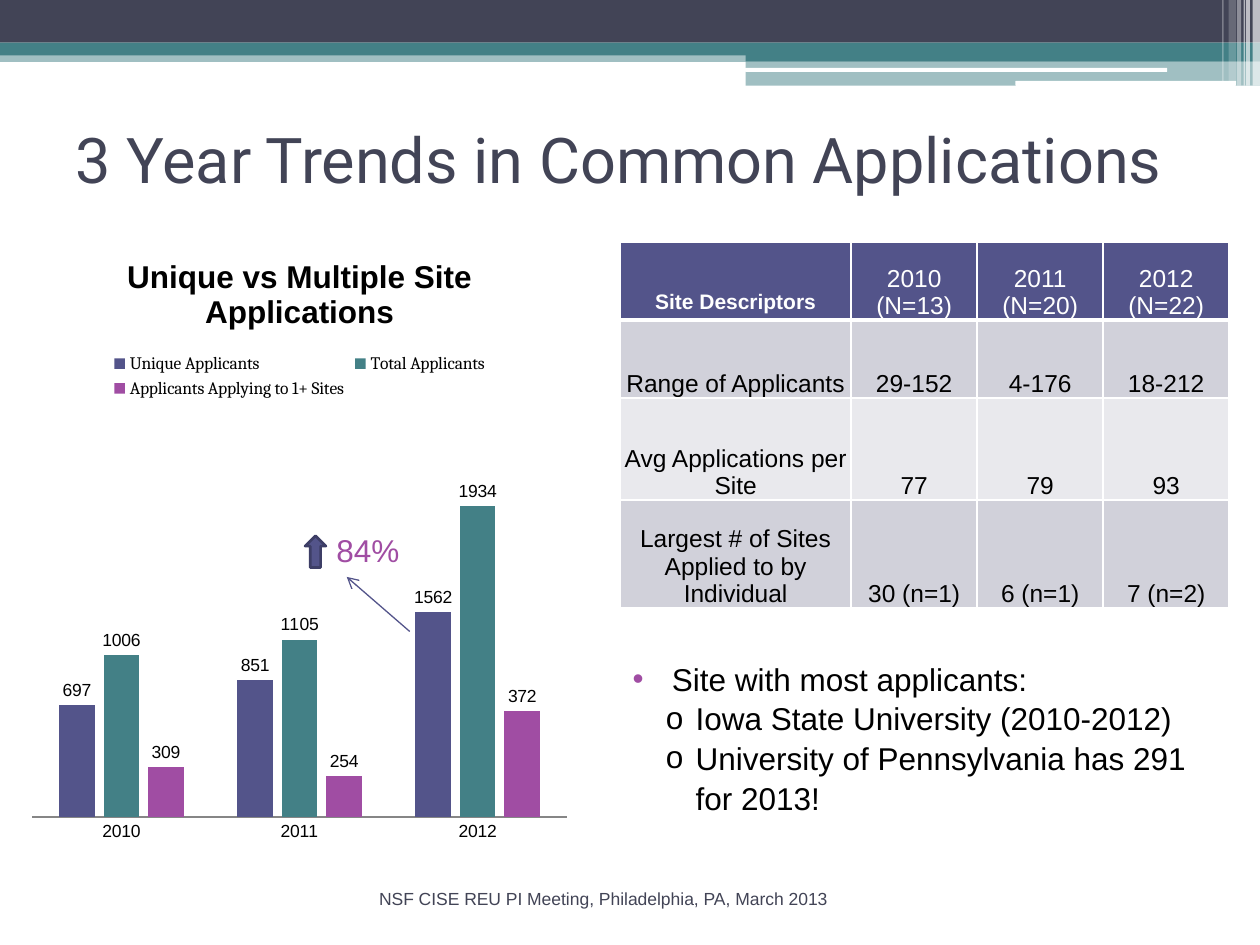
from lxml.etree import SubElement
from pptx import Presentation
from pptx.chart.data import CategoryChartData
from pptx.dml.color import RGBColor
from pptx.enum.chart import XL_CHART_TYPE as ChartType, XL_LABEL_POSITION as LabelPosition
from pptx.enum.chart import XL_LEGEND_POSITION as LegendPosition, XL_TICK_MARK as TickMark
from pptx.enum.shapes import MSO_CONNECTOR as Connector, MSO_SHAPE as Shape
from pptx.enum.text import MSO_ANCHOR as Anchor, MSO_AUTO_SIZE as AutoSize, PP_ALIGN as Align
from pptx.oxml.ns import qn
from pptx.util import Cm, Pt

SLATE = RGBColor(0x42, 0x44, 0x56)
TEAL = RGBColor(0x43, 0x80, 0x86)
INDIGO = RGBColor(0x53, 0x54, 0x8A)
DARK_INDIGO = RGBColor(0x3D, 0x3E, 0x66)
PURPLE = RGBColor(0xA0, 0x4D, 0xA3)
BAND_DARK = RGBColor(0xD1, 0xD1, 0xDA)
BAND_LIGHT = RGBColor(0xE9, 0xE9, 0xED)
GRAY = RGBColor(0x86, 0x86, 0x86)
WHITE = RGBColor(0xFF, 0xFF, 0xFF)
BLACK = RGBColor(0, 0, 0)

HEADER_BARS = [
    (0, 1.02, 25.4, 0.23, TEAL, 50),
    (0, 0, 25.4, 0.86, SLATE, 100),
    (0, 0.86, 25.4, 0.26, TEAL, 100),
    (15.03, 0.99, 10.37, 0.24, TEAL, 100),
    (15.03, 1.23, 10.37, 0.5, TEAL, 50),
]
HEADER_LINES = [(15.02, 1.37, 8.51, 0.08), (20.47, 1.63, 4.45, 0.1)]
HEADER_STRIPES = [
    (25.25, 0.15, 1.73, 65), (25.12, 0.08, 1.73, 65), (25.07, 0.03, 1.73, 60),
    (24.94, 0.08, 1.73, 40), (24.77, 0.15, 1.63, 20), (24.64, 0.03, 1.63, 30),
]
YEARS = ["2010", "2011", "2012"]
SERIES = [
    ("Unique Applicants", (697, 851, 1275), INDIGO, "1562"),
    ("Total Applicants", (1006, 1105, 1934), TEAL, None),
    ("Applicants Applying to 1+ Sites", (309, 254, 659), PURPLE, "372"),
]
TABLE_ROWS = [
    ("Site Descriptors", "2010 (N=13)", "2011 (N=20)", "2012 (N=22)"),
    ("Range of Applicants", "29-152", "4-176", "18-212"),
    ("Avg Applications per Site", "77", "79", "93"),
    ("Largest # of Sites Applied to by Individual", "30 (n=1)", "6 (n=1)", "7 (n=2)"),
]
COLUMN_WIDTHS = [4.66, 2.54, 2.54, 2.54]
ROW_HEIGHTS = [1.57, 1.57, 2.06, 2.18]
SITE_LIST = [
    (0, "Site with most applicants:"),
    (1, "Iowa State University (2010-2012)"),
    (1, "University of Pennsylvania has 291 for 2013!"),
]


class SlideBuilder:
    font = "Arial"

    def __init__(self, slide):
        self.slide = slide

    def style(self, font, size, color, bold=False, name=None):
        font.name = name or self.font
        font.size = Pt(size)
        font.color.rgb = color
        font.bold = bold

    def place(self, shape, left, top, width, height):
        shape.left, shape.top = Cm(left), Cm(top)
        shape.width, shape.height = Cm(width), Cm(height)

    def shape(self, kind, left, top, width, height, color, opacity=100):
        shape = self.slide.shapes.add_shape(kind, Cm(left), Cm(top), Cm(width), Cm(height))
        shape.shadow.inherit = False
        shape.fill.solid()
        shape.fill.fore_color.rgb = color
        shape.line.fill.background()
        if opacity < 100:
            fill = shape._element.spPr.find(qn("a:solidFill"))
            SubElement(fill[0], qn("a:alpha"), val=str(opacity * 1000))
        return shape

    def title(self, text, *area):
        title = self.slide.shapes.title
        self.place(title, *area)
        frame = title.text_frame
        frame.text = text
        frame.auto_size = AutoSize.NONE
        frame.vertical_anchor = Anchor.MIDDLE
        para = frame.paragraphs[0]
        para.alignment = Align.LEFT
        self.style(para.runs[0].font, 36, SLATE, name="Roboto")

    def bullets(self, items, *area):
        body = self.slide.placeholders[1]
        self.place(body, *area)
        frame = body.text_frame
        frame.text = "\n".join(text for level, text in items)
        frame.auto_size = AutoSize.NONE
        for para, (level, text) in zip(frame.paragraphs, items):
            para.level = level
            para.space_before = Pt(0)
            para.line_spacing = 1.05
            self.style(para.runs[0].font, 18, BLACK)
            margin, hanging, mark = [(0.79, 0.79, "•"), (1.27, 0.6, "o")][level]
            props = para._p.get_or_add_pPr()
            props.set("marL", str(Cm(margin)))
            props.set("indent", str(-Cm(hanging)))
            if level == 0:
                SubElement(SubElement(props, qn("a:buClr")), qn("a:srgbClr"), val=str(PURPLE))
            SubElement(props, qn("a:buFont"), typeface=self.font)
            SubElement(props, qn("a:buChar"), char=mark)

    def text(self, text, size, color, *area):
        box = self.slide.shapes.add_textbox(*map(Cm, area))
        frame = box.text_frame
        frame.word_wrap = True
        frame.text = text
        para = frame.paragraphs[0]
        para.alignment = Align.CENTER
        self.style(para.runs[0].font, size, color)

    def chart(self, title, *area):
        data = CategoryChartData()
        data.categories = YEARS
        for name, values, color, label in SERIES:
            data.add_series(name, values)
        frame = self.slide.shapes.add_chart(ChartType.COLUMN_CLUSTERED, *map(Cm, area), data)
        chart = frame.chart
        self.style(chart.font, 10, BLACK, name="Cambria")
        chart.has_title = True
        chart.chart_title.text_frame.text = title
        span = chart.chart_title.text_frame.paragraphs[0].runs[0]
        self.style(span.font, 18, BLACK, bold=True)
        chart.has_legend = True
        chart.legend.position = LegendPosition.TOP
        chart.legend.include_in_layout = False
        values_axis = chart.value_axis
        values_axis.visible = False
        values_axis.has_major_gridlines = False
        values_axis.minimum_scale, values_axis.maximum_scale = 0, 2500
        years_axis = chart.category_axis
        years_axis.major_tick_mark = TickMark.NONE
        years_axis.format.line.color.rgb = GRAY
        self.style(years_axis.tick_labels.font, 10, BLACK)
        plot = chart.plots[0]
        plot.vary_by_categories = False
        plot.overlap, plot.gap_width = -25, 150
        for series, (name, values, color, label) in zip(plot.series, SERIES):
            series.format.fill.solid()
            series.format.fill.fore_color.rgb = color
            labels = series.data_labels
            labels.show_value = True
            labels.position = LabelPosition.OUTSIDE_END
            self.style(labels.font, 10, BLACK)
            if label:
                point_label = series.points[2].data_label
                point_label.text_frame.text = label
                point_label.position = LabelPosition.OUTSIDE_END
                self.style(point_label.text_frame.paragraphs[0].runs[0].font, 10, BLACK)

    def table(self, rows, left, top):
        area = (left, top, sum(COLUMN_WIDTHS), sum(ROW_HEIGHTS))
        table = self.slide.shapes.add_table(len(rows), len(rows[0]), *map(Cm, area)).table
        for column, width in zip(table.columns, COLUMN_WIDTHS):
            column.width = Cm(width)
        for index, (row, texts) in enumerate(zip(table.rows, rows)):
            row.height = Cm(ROW_HEIGHTS[index])
            header = index == 0
            fill = INDIGO if header else BAND_DARK if index % 2 else BAND_LIGHT
            for column, (cell, text) in enumerate(zip(row.cells, texts)):
                self.cell(cell, text, fill, header, header and column == 0, index == 1)

    def cell(self, cell, text, fill, header, corner, below_header):
        cell.text = text
        cell.vertical_anchor = Anchor.BOTTOM
        if not corner:
            cell.margin_left = cell.margin_right = cell.margin_top = cell.margin_bottom = 0
        para = cell.text_frame.paragraphs[0]
        para.alignment = Align.CENTER
        self.style(para.runs[0].font, 12 if corner else 14, WHITE if header else BLACK, corner)
        props = cell._tc.get_or_add_tcPr()
        widths = {"lnL": 1, "lnR": 1, "lnT": 3 if below_header else 1, "lnB": 3 if header else 1}
        for side, width in widths.items():
            line = SubElement(props, qn("a:" + side), w=str(Pt(width)))
            SubElement(SubElement(line, qn("a:solidFill")), qn("a:srgbClr"), val=str(WHITE))
        cell.fill.solid()
        cell.fill.fore_color.rgb = fill

    def arrow(self, *ends):
        arrow = self.slide.shapes.add_connector(Connector.STRAIGHT, *map(Cm, ends))
        arrow.line.color.rgb = INDIGO
        arrow.line.width = Pt(0.75)
        SubElement(arrow.line._get_or_add_ln(), qn("a:tailEnd"), type="arrow")
        SubElement(arrow._element.spPr, qn("a:effectLst"))


def main():
    deck = Presentation()
    deck.slide_width, deck.slide_height = Cm(25.4), Cm(19.05)
    builder = SlideBuilder(deck.slides.add_slide(deck.slide_layouts[1]))
    for bar in HEADER_BARS:
        builder.shape(Shape.RECTANGLE, *bar)
    for line in HEADER_LINES:
        builder.shape(Shape.ROUNDED_RECTANGLE, *line, WHITE)
    for left, width, height, opacity in HEADER_STRIPES:
        builder.shape(Shape.RECTANGLE, left, 0, width, height, WHITE, opacity)
    builder.title("3 Year Trends in Common Applications", 1.27, 1.7, 22.86, 2.97)
    builder.chart("Unique vs Multiple Site Applications", 0.43, 4.65, 11.22, 12.57)
    builder.table(TABLE_ROWS, 12.5, 4.88)
    builder.text("NSF CISE REU PI Meeting, Philadelphia, PA, March 2013", 10, SLATE, 5.28, 17.78, 13.76, 1.27)
    builder.bullets(SITE_LIST, 12.5, 13.13, 12.27, 3.33)
    builder.text("84%", 18, PURPLE, 5.51, 10.59, 3.81, 1.02)
    growth = builder.shape(Shape.UP_ARROW, 6.15, 10.8, 0.42, 0.64, INDIGO)
    growth.line.color.rgb = DARK_INDIGO
    growth.line.width = Pt(1.5)
    builder.arrow(8.26, 12.73, 6.99, 11.63)
    deck.save("out.pptx")


if __name__ == "__main__":
    main()
